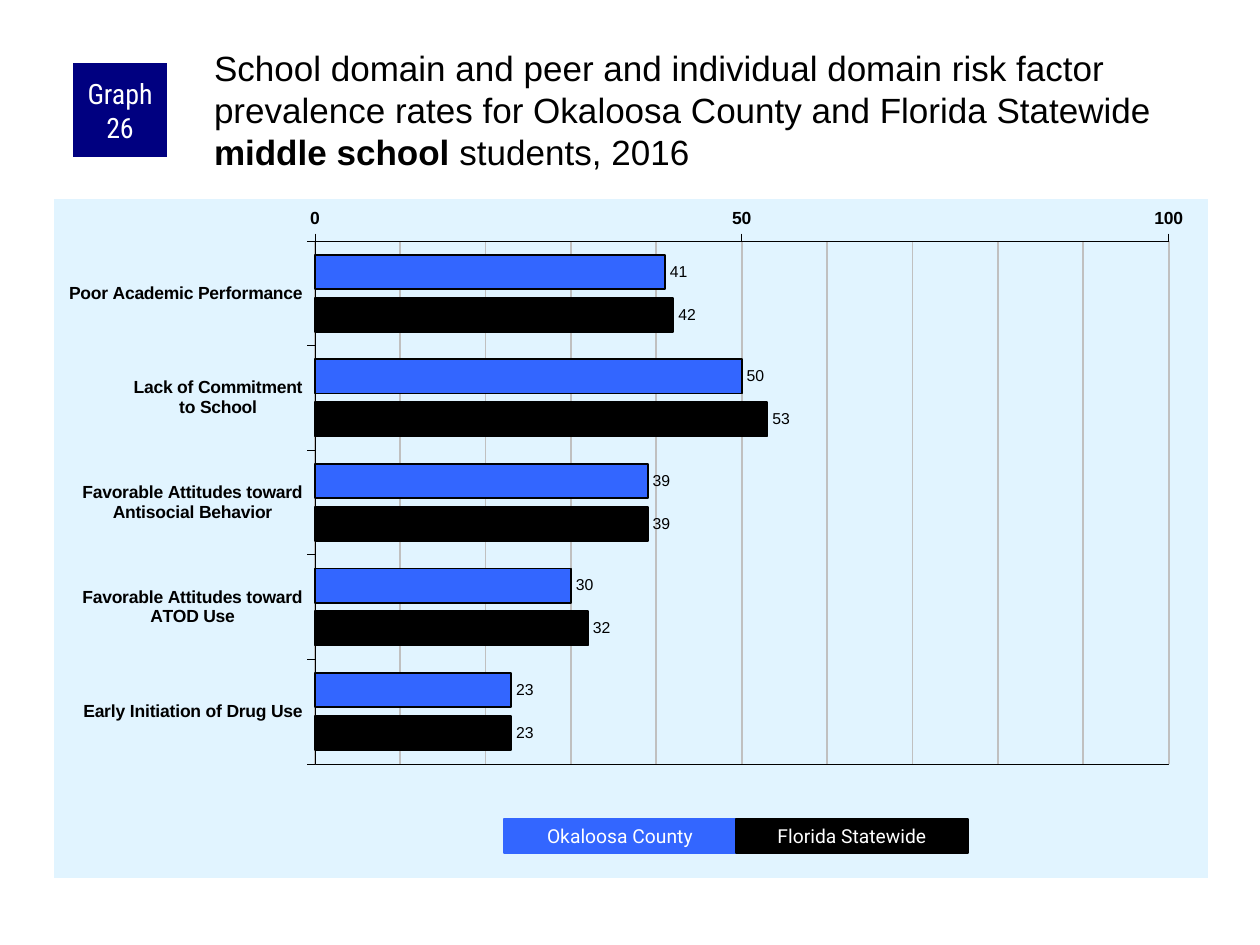
from copy import deepcopy
from lxml.etree import SubElement
from pptx import Presentation
from pptx.chart.data import CategoryChartData
from pptx.dml.color import RGBColor
from pptx.enum.chart import XL_AXIS_CROSSES, XL_CHART_TYPE, XL_LABEL_POSITION, XL_TICK_MARK
from pptx.enum.shapes import MSO_SHAPE
from pptx.enum.text import MSO_ANCHOR, PP_ALIGN
from pptx.oxml import parse_xml
from pptx.oxml.ns import nsdecls, qn
from pptx.util import Pt

PX = 914400 // 126
COLORS = {"county": "3366FF", "state": "000000", "badge": "000080", "panel": "E1F4FF",
          "grid": "C0C0C0", "ink": "000000", "white": "FFFFFF"}
RATES = [
    ("Poor Academic Performance", 41, 42),
    ("Lack of Commitment\nto School", 50, 53),
    ("Favorable Attitudes toward\nAntisocial Behavior", 39, 39),
    ("Favorable Attitudes toward\nATOD Use", 30, 32),
    ("Early Initiation of Drug Use", 23, 23),
]
GROUPS = [("Okaloosa County", "county"), ("Florida Statewide", "state")]
TITLE = [
    ("School domain and peer and individual domain risk factor prevalence rates "
     "for Okaloosa County and Florida Statewide ", False),
    ("middle school", True),
    (" students, 2016", False),
]


def rgb(name):
    return RGBColor.from_string(COLORS[name])


def emu(*lengths):
    return [n * PX for n in lengths]


def style_font(font, size, color="ink", name="Arial", bold=False):
    font.size, font.name, font.bold = Pt(size), name, bold
    font.color.rgb = rgb(color)


def style_line(line, color, width):
    line.color.rgb = rgb(color)
    line.width = Pt(width)


def add_label_box(s, box, text, fill, size, font, margin):
    """Add a filled rectangle with centred white text."""
    sp = s.shapes.add_shape(MSO_SHAPE.RECTANGLE, *emu(*box))
    sp.shadow.inherit = False
    sp.fill.solid()
    sp.fill.fore_color.rgb = rgb(fill)
    style_line(sp.line, fill, 0.75)
    tf = sp.text_frame
    tf.word_wrap = True
    tf.vertical_anchor = MSO_ANCHOR.MIDDLE
    tf.margin_left = tf.margin_right = margin * PX
    tf.margin_top = tf.margin_bottom = 0
    tf.text = text
    p = tf.paragraphs[0]
    p.alignment = PP_ALIGN.CENTER
    style_font(p.runs[0].font, size, "white", font)
    return sp


def add_header(s, box):
    x, y, w, h = box
    badge = add_label_box(s, (x, y + 21, 94, 94), "Graph 26", "badge", 16, "Roboto Condensed", 6)
    badge.line.fill.background()
    title = s.shapes.title
    title.left, title.top, title.width, title.height = emu(x + 137, y, w - 137, h)
    tf = title.text_frame
    tf.word_wrap = True
    tf.vertical_anchor = MSO_ANCHOR.TOP
    tf.margin_left = tf.margin_top = 4 * PX
    tf.margin_right = tf.margin_bottom = 0
    p = tf.paragraphs[0]
    p.alignment = PP_ALIGN.LEFT
    p.line_spacing = Pt(24)
    for text, bold in TITLE:
        r = p.add_run()
        r.text = text
        style_font(r.font, 20, bold=bold)


def style_axes(chart):
    cat, val = chart.category_axis, chart.value_axis
    for axis in (cat, val):
        style_font(axis.tick_labels.font, 10, bold=True)
        style_line(axis.format.line, "ink", 0.25)
        axis.major_tick_mark = XL_TICK_MARK.OUTSIDE
        axis.minor_tick_mark = XL_TICK_MARK.NONE
        axis.has_major_gridlines = False
    cat.reverse_order = True
    cat.crosses = XL_AXIS_CROSSES.MAXIMUM
    val.minimum_scale, val.maximum_scale = 0, 100
    val.major_unit, val.minor_unit = 50, 10
    val.has_major_gridlines = val.has_minor_gridlines = True
    style_line(val.major_gridlines.format.line, "grid", 1)
    major, minor = (val._element.find(qn(f"c:{kind}Gridlines")) for kind in ("major", "minor"))
    minor.append(deepcopy(major.find(qn("c:spPr"))))


def place_plot(chart, x, y, w, h):
    """Fix the inner plot area, in fractions of the chart, and outline it."""
    area = chart.plots[0]._element.getparent()
    for old in area.findall(qn("c:layout")):
        area.remove(old)
    layout = parse_xml(f"<c:layout {nsdecls('c')}/>")
    manual = SubElement(layout, qn("c:manualLayout"))
    for tag, value in [("layoutTarget", "inner"), ("xMode", "edge"), ("yMode", "edge"),
                       ("x", x), ("y", y), ("w", w), ("h", h)]:
        SubElement(manual, qn(f"c:{tag}")).set("val", str(value))
    area.insert(0, layout)
    area.append(parse_xml(
        f'<c:spPr {nsdecls("c", "a")}><a:noFill/><a:ln w="3175"><a:solidFill>'
        f'<a:srgbClr val="{COLORS["ink"]}"/></a:solidFill></a:ln></c:spPr>'))


def fill_panel(chart):
    panel = parse_xml(
        f'<c:spPr {nsdecls("c", "a")}><a:solidFill><a:srgbClr val="{COLORS["panel"]}"/>'
        f'</a:solidFill><a:ln><a:noFill/></a:ln></c:spPr>')
    chart._chartSpace.find(qn("c:chart")).addnext(panel)


def add_rates_chart(s, box):
    data = CategoryChartData()
    data.categories = [row[0] for row in RATES]
    for i, (name, _) in enumerate(GROUPS, 1):
        data.add_series(name, [row[i] for row in RATES])
    chart = s.shapes.add_chart(XL_CHART_TYPE.BAR_CLUSTERED, *emu(*box), data).chart
    chart.has_legend = chart.has_title = False
    style_font(chart.font, 11.8)
    plot = chart.plots[0]
    plot.gap_width, plot.overlap, plot.vary_by_categories = 80, -25, False
    for series, (_, color) in zip(plot.series, GROUPS):
        series.format.fill.solid()
        series.format.fill.fore_color.rgb = rgb(color)
        style_line(series.format.line, "ink", 1)
        labels = series.data_labels
        labels.show_value = True
        labels.position = XL_LABEL_POSITION.OUTSIDE_END
        style_font(labels.font, 9)
    style_axes(chart)
    place_plot(chart, 0.226, 0.062, 0.74, 0.77)
    fill_panel(chart)


def add_key(s, box):
    x, y, w, h = box
    step = w // len(GROUPS)
    for i, (name, color) in enumerate(GROUPS):
        add_label_box(s, (x + i * step, y, step, h), name, color, 11, "Roboto", 12)


def main():
    prs = Presentation()
    prs.slide_width, prs.slide_height = emu(1260, 945)
    s = prs.slides.add_slide(prs.slide_layouts[5])
    add_rates_chart(s, (54, 199, 1154, 679))
    add_header(s, (73, 42, 1135, 105))
    add_key(s, (504, 819, 464, 34))
    prs.save("out.pptx")


if __name__ == "__main__":
    main()
